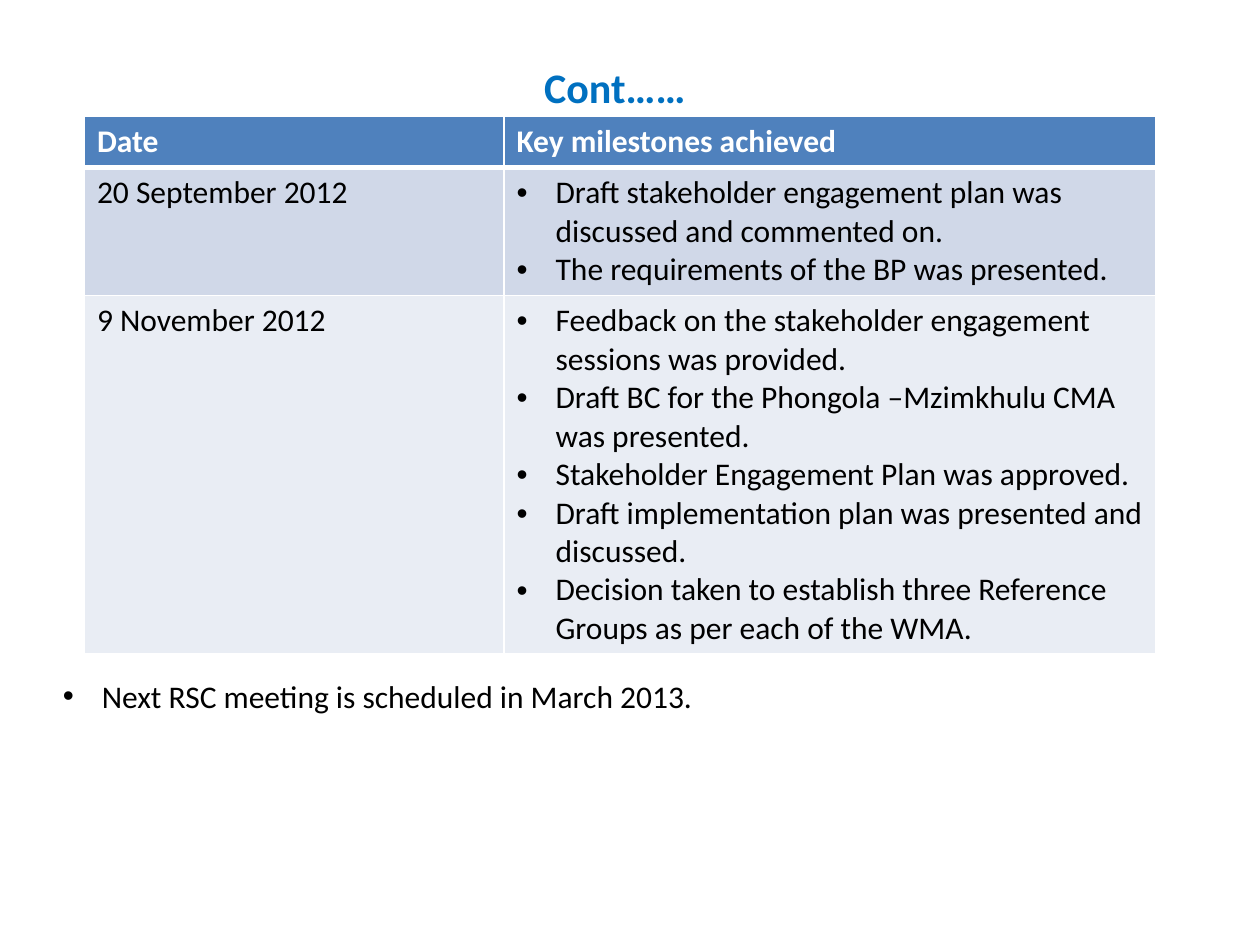
from dataclasses import dataclass

import lxml.etree
import pptx
import pptx.dml.color
import pptx.enum.shapes
import pptx.enum.text
import pptx.oxml.ns
import pptx.util

WHITE = pptx.dml.color.RGBColor(0xFF, 0xFF, 0xFF)
BLACK = pptx.dml.color.RGBColor(0x00, 0x00, 0x00)
TITLE_BLUE = pptx.dml.color.RGBColor(0x00, 0x70, 0xC0)
HEADER_BLUE = pptx.dml.color.RGBColor(0x4F, 0x81, 0xBD)
BAND_DARK = pptx.dml.color.RGBColor(0xD0, 0xD8, 0xE8)
BAND_LIGHT = pptx.dml.color.RGBColor(0xE9, 0xED, 0xF4)

FONT = "Calibri"
GRID = pptx.util.Inches(0.1)  # the slide is 100 columns by 75 rows
BULLET_INDENT = pptx.util.Inches(0.31)


@dataclass(frozen=True)
class Area:
    column: float
    row: float
    columns: float
    rows: float

    def lengths(self) -> list[int]:
        return [cells(n) for n in (self.column, self.row, self.columns, self.rows)]


@dataclass(frozen=True)
class Meeting:
    date: str
    milestones: list[str]
    rows: float
    fill: pptx.dml.color.RGBColor


TITLE_AREA = Area(9.8, 4.4, 78, 5)
TABLE_AREA = Area(6.7, 9.2, 85, 42.1)
NEXT_AREA = Area(4, 53.2, 90.6, 7.1)
COLUMN_WIDTHS = (33.3, 51.7)
HEADER_ROWS = 4.1

MEETINGS = [
    Meeting("20 September 2012", [
        "Draft stakeholder engagement plan was discussed and commented on.",
        "The requirements of the BP was presented.",
    ], 10, BAND_DARK),
    Meeting("9 November 2012", [
        "Feedback on the stakeholder engagement sessions was provided.",
        "Draft BC for the Phongola –Mzimkhulu CMA was presented.",
        "Stakeholder Engagement Plan was approved.",
        "Draft implementation plan was presented and discussed.",
        "Decision taken to establish three Reference Groups as per each of the WMA.",
    ], 28, BAND_LIGHT),
]


def cells(count: float) -> int:
    return round(count * GRID)


def add_element(parent, tag: str, **attributes: str):
    return lxml.etree.SubElement(parent, pptx.oxml.ns.qn(tag), **attributes)


def add_bullet(para) -> None:
    properties = para._p.get_or_add_pPr()
    properties.set("marL", str(BULLET_INDENT))
    properties.set("indent", str(-BULLET_INDENT))
    add_element(properties, "a:buFont", typeface="Arial")
    add_element(properties, "a:buChar", char="•")


def write_text(frame, lines: list[str], *, size: float = 18, color=BLACK,
               bold: bool = False, bullet: bool = False,
               align=pptx.enum.text.PP_ALIGN.LEFT) -> None:
    frame.word_wrap = True
    for index, line in enumerate(lines):
        para = frame.add_paragraph() if index else frame.paragraphs[0]
        para.alignment = align
        if bullet:
            add_bullet(para)
        span = para.add_run()
        span.text = line
        span.font.name = FONT
        span.font.size = pptx.util.Pt(size)
        span.font.bold = bold
        span.font.color.rgb = color


def style_cell(cell, fill, top: float, bottom: float) -> None:
    """Give the cell white borders, with top and bottom in points, and a fill."""
    properties = cell._tc.get_or_add_tcPr()
    for side, width in (("L", 1), ("R", 1), ("T", top), ("B", bottom)):
        line = add_element(properties, f"a:ln{side}", w=str(pptx.util.Pt(width)))
        add_element(add_element(line, "a:solidFill"), "a:srgbClr", val=str(WHITE))
    cell.fill.solid()
    cell.fill.fore_color.rgb = fill


def add_title(page) -> None:
    box = page.shapes.add_shape(
        pptx.enum.shapes.MSO_SHAPE.RECTANGLE, *TITLE_AREA.lengths())
    box.shadow.inherit = False
    box.fill.solid()
    box.fill.fore_color.rgb = WHITE
    box.line.fill.background()
    box.text_frame.vertical_anchor = pptx.enum.text.MSO_ANCHOR.TOP
    write_text(box.text_frame, ["Cont……"], size=24, color=TITLE_BLUE, bold=True,
               align=pptx.enum.text.PP_ALIGN.CENTER)


def add_milestone_table(page) -> None:
    table = page.shapes.add_table(
        len(MEETINGS) + 1, len(COLUMN_WIDTHS), *TABLE_AREA.lengths()).table
    for column, width in zip(table.columns, COLUMN_WIDTHS):
        column.width = cells(width)
    table.rows[0].height = cells(HEADER_ROWS)
    for cell, heading in zip(table.rows[0].cells, ("Date", "Key milestones achieved")):
        style_cell(cell, HEADER_BLUE, top=1, bottom=3)
        write_text(cell.text_frame, [heading], color=WHITE, bold=True)
    for number, meeting in enumerate(MEETINGS, start=1):
        row = table.rows[number]
        row.height = cells(meeting.rows)
        date_cell, milestone_cell = row.cells
        for cell in (date_cell, milestone_cell):
            style_cell(cell, meeting.fill, top=3 if number == 1 else 1, bottom=1)
        write_text(date_cell.text_frame, [meeting.date])
        write_text(milestone_cell.text_frame, meeting.milestones, bullet=True)


def add_next_meeting(page) -> None:
    box = page.shapes.add_textbox(*NEXT_AREA.lengths())
    write_text(box.text_frame, ["Next RSC meeting is scheduled in March 2013."],
               bullet=True)


def main() -> None:
    deck = pptx.Presentation()
    deck.slide_width, deck.slide_height = cells(100), cells(75)
    page = deck.slides.add_slide(deck.slide_layouts[6])
    add_title(page)
    add_milestone_table(page)
    add_next_meeting(page)
    deck.save("out.pptx")


if __name__ == "__main__":
    main()
